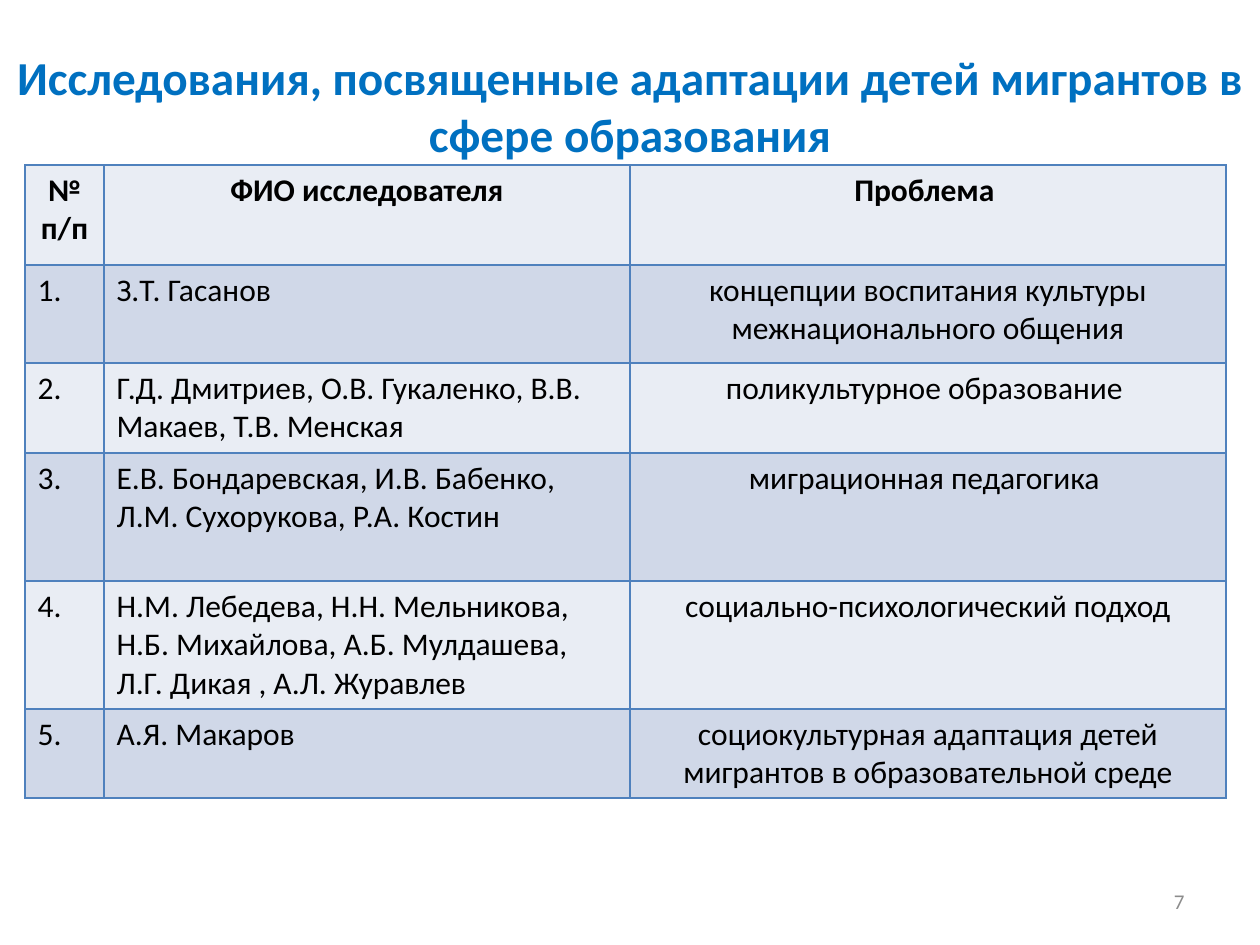
from lxml import etree
from pptx import Presentation
from pptx import util as u
from pptx.dml.color import RGBColor
from pptx.enum import text
from pptx.oxml import ns

PX = 914400 / 126
FONT = "Calibri"
COLORS = {
    "title": "0070C0",
    "text": "000000",
    "number": "8C8C8C",
    "border": "4F81BD",
    "light": "E9EDF4",
    "dark": "D0D8E8",
}
TITLE = "Исследования, посвященные адаптации детей мигрантов в сфере образования"
COLUMN_WIDTHS = [79, 526, 596]
ROW_HEIGHTS = [100, 98, 90, 128, 128, 89]
HEADER = ["№\nп/п", "ФИО исследователя", "Проблема "]
STUDIES = [
    ("З.Т. Гасанов", "концепции воспитания культуры межнационального общения"),
    ("Г.Д. Дмитриев, О.В. Гукаленко, В.В. Макаев, Т.В. Менская",
     "поликультурное образование "),
    ("Е.В. Бондаревская, И.В. Бабенко, Л.М. Сухорукова, Р.А. Костин",
     "миграционная педагогика "),
    ("Н.М. Лебедева, Н.Н. Мельникова, Н.Б. Михайлова, А.Б. Мулдашева, "
     "Л.Г. Дикая , А.Л. Журавлев", "социально-психологический подход"),
    ("А.Я. Макаров",
     "социокультурная адаптация детей мигрантов в образовательной среде"),
]


def px(length):
    """Turn a length in pixels into EMU."""
    return u.Emu(round(length * PX))


def write(frame, wording, size, color, align, bold=False):
    """Fill a text frame and format all its runs alike."""
    frame.text = wording
    frame.word_wrap = True
    for para in frame.paragraphs:
        para.alignment = align
        for span in para.runs:
            span.font.name = FONT
            span.font.size = u.Pt(size)
            span.font.bold = bold
            span.font.color.rgb = RGBColor.from_string(COLORS[color])


def outline(cell):
    """Draw a thin line on all four sides of a cell."""
    properties = cell._tc.get_or_add_tcPr()
    for position, side in enumerate(("a:lnL", "a:lnR", "a:lnT", "a:lnB")):
        line = etree.Element(ns.qn(side), w=str(u.Pt(1)))
        fill = etree.SubElement(line, ns.qn("a:solidFill"))
        etree.SubElement(fill, ns.qn("a:srgbClr"), val=COLORS["border"])
        properties.insert(position, line)


def add_title(page, left, top, width, height):
    """Place the heading in the title placeholder."""
    box = page.shapes.title
    box.left, box.top, box.width, box.height = map(px, (left, top, width, height))
    frame = box.text_frame
    write(frame, TITLE, 27, "title", text.PP_ALIGN.CENTER, bold=True)
    frame.auto_size = text.MSO_AUTO_SIZE.NONE
    frame.vertical_anchor = text.MSO_ANCHOR.MIDDLE


def add_studies(page, left, top):
    """Place the table of researchers and their problems."""
    rows = [HEADER] + [(f"{n}.", *study) for n, study in enumerate(STUDIES, 1)]
    table = page.shapes.add_table(
        len(rows), len(COLUMN_WIDTHS), px(left), px(top),
        px(sum(COLUMN_WIDTHS)), px(sum(ROW_HEIGHTS))).table
    table.first_row = table.horz_banding = False
    for column, width in zip(table.columns, COLUMN_WIDTHS):
        column.width = px(width)
    for r, (row, height, wordings) in enumerate(zip(table.rows, ROW_HEIGHTS, rows)):
        row.height = px(height)
        for c, (cell, wording) in enumerate(zip(row.cells, wordings)):
            centred = r == 0 or c == 2
            align = text.PP_ALIGN.CENTER if centred else text.PP_ALIGN.LEFT
            write(cell.text_frame, wording, 18, "text", align, bold=r == 0)
            cell.fill.solid()
            cell.fill.fore_color.rgb = RGBColor.from_string(
                COLORS["dark" if r % 2 else "light"])
            outline(cell)


def add_page_number(page, left, top, width, height):
    """Place the page number at the lower right."""
    box = page.shapes.add_textbox(*map(px, (left, top, width, height)))
    write(box.text_frame, "7", 12, "number", text.PP_ALIGN.RIGHT)
    box.text_frame.vertical_anchor = text.MSO_ANCHOR.MIDDLE


def main():
    """Build the deck and save it."""
    deck = Presentation()
    deck.slide_width, deck.slide_height = px(1260), px(945)
    page = deck.slides.add_slide(deck.slide_layouts[5])
    add_title(page, 0, 26, 1260, 158)
    add_page_number(page, 903, 876, 294, 50)
    add_studies(page, 25, 165)
    deck.save("out.pptx")


if __name__ == "__main__":
    main()
